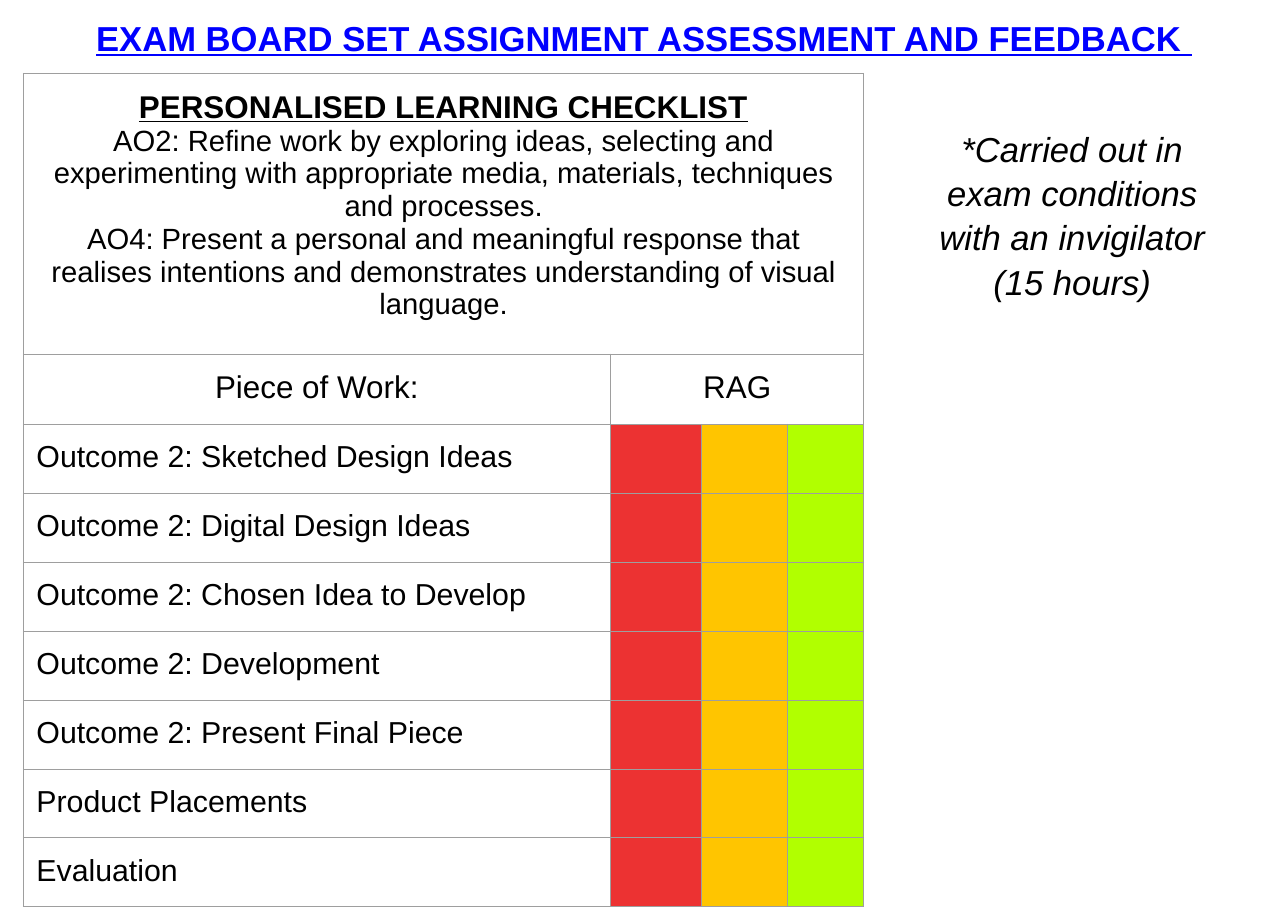
from lxml import etree
from pptx import Presentation
from pptx import util as u
from pptx.dml import color
from pptx.enum import text
from pptx.oxml import ns

COLOURS = {
    "title": "0000FF",
    "text": "000000",
    "border": "9E9E9E",
    "red": "EC3232",
    "amber": "FFC500",
    "green": "B1FF00",
}
RATINGS = ["red", "amber", "green"]
CRITERIA = [
    "PERSONALISED LEARNING CHECKLIST",
    "AO2: Refine work by exploring ideas, selecting and experimenting with "
    "appropriate media, materials, techniques and processes.",
    "AO4: Present a personal and meaningful response that realises intentions "
    "and demonstrates understanding of visual language.",
]
TASKS = [
    "Outcome 2: Sketched Design Ideas",
    "Outcome 2: Digital Design Ideas",
    "Outcome 2: Chosen Idea to Develop",
    "Outcome 2: Development",
    "Outcome 2: Present Final Piece",
    "Product Placements",
    "Evaluation",
]
COLUMN_WIDTHS = [19.15, 2.95, 2.82, 2.49]
ROW_HEIGHTS = [8.59, 2.21] + [2.16] * len(TASKS)
CENTRE = text.PP_ALIGN.CENTER


def rgb(name):
    return color.RGBColor.from_string(COLOURS[name])


def format_paragraph(para, size, colour="text", align=CENTRE, spacing=1.0,
                     bold=False, italic=False, underline=False):
    para.alignment = align
    para.line_spacing = spacing
    for span in para.runs:
        font = span.font
        font.name = "Arial"
        font.size = u.Pt(size)
        font.color.rgb = rgb(colour)
        font.bold, font.italic, font.underline = bold, italic, underline


def set_frame(frame, margin):
    frame.word_wrap = True
    frame.vertical_anchor = text.MSO_ANCHOR.TOP
    frame.margin_left = frame.margin_right = u.Cm(margin)
    frame.margin_top = frame.margin_bottom = u.Cm(margin)


def add_title(slide):
    title = slide.shapes.title
    title.left, title.top = u.Cm(0), u.Cm(0)
    title.width, title.height = u.Cm(42), u.Cm(2.29)
    frame = title.text_frame
    set_frame(frame, 0.46)
    frame.auto_size = text.MSO_AUTO_SIZE.SHAPE_TO_FIT_TEXT
    frame.text = "EXAM BOARD SET ASSIGNMENT ASSESSMENT AND FEEDBACK "
    format_paragraph(frame.paragraphs[0], 32, "title", spacing=1.07,
                     bold=True, underline=True)


def add_note(slide):
    box = slide.shapes.add_textbox(u.Cm(29.62), u.Cm(3.81), u.Cm(10.69), u.Cm(12.27))
    frame = box.text_frame
    set_frame(frame, 0.25)
    frame.text = "*Carried out in exam conditions with an invigilator (15 hours)"
    format_paragraph(frame.paragraphs[0], 32, spacing=1.07, italic=True)


def add_borders(cell):
    properties = cell._tc.get_or_add_tcPr()
    for side in ("a:lnL", "a:lnR", "a:lnT", "a:lnB"):
        line = etree.SubElement(properties, ns.qn(side), w=str(u.Pt(0.75)))
        fill = etree.SubElement(line, ns.qn("a:solidFill"))
        etree.SubElement(fill, ns.qn("a:srgbClr"), val=COLOURS["border"])


def style_cell(cell):
    cell.margin_left = cell.margin_right = u.Cm(0.43)
    cell.margin_top = cell.margin_bottom = u.Cm(0.53)
    add_borders(cell)
    cell.fill.background()


def fill_cell(cell, words, size, align=CENTRE):
    cell.text_frame.text = words
    for para in cell.text_frame.paragraphs:
        format_paragraph(para, size, align=align)


def add_checklist(slide):
    frame = slide.shapes.add_table(
        len(ROW_HEIGHTS), len(COLUMN_WIDTHS), u.Cm(0.76), u.Cm(2.39),
        u.Cm(sum(COLUMN_WIDTHS)), u.Cm(sum(ROW_HEIGHTS)))
    table = frame.table
    table.first_row = table.horz_banding = False
    for column, width in zip(table.columns, COLUMN_WIDTHS):
        column.width = u.Cm(width)
    for row, height in zip(table.rows, ROW_HEIGHTS):
        row.height = u.Cm(height)
    for cell in table.iter_cells():
        style_cell(cell)

    heading = table.cell(0, 0)
    heading.merge(table.cell(0, 3))
    fill_cell(heading, "\n".join(CRITERIA), 27)
    format_paragraph(heading.text_frame.paragraphs[0], 29, bold=True, underline=True)

    table.cell(1, 1).merge(table.cell(1, 3))
    fill_cell(table.cell(1, 0), "Piece of Work:", 29)
    fill_cell(table.cell(1, 1), "RAG", 29)

    for row, task in enumerate(TASKS, start=2):
        fill_cell(table.cell(row, 0), task, 28, text.PP_ALIGN.LEFT)
        for column, rating in enumerate(RATINGS, start=1):
            fill = table.cell(row, column).fill
            fill.solid()
            fill.fore_color.rgb = rgb(rating)


def main():
    deck = Presentation()
    deck.slide_width, deck.slide_height = u.Cm(42), u.Cm(29.7)
    slide = deck.slides.add_slide(deck.slide_layouts[5])
    add_checklist(slide)
    add_title(slide)
    add_note(slide)
    deck.save("out.pptx")


if __name__ == "__main__":
    main()
